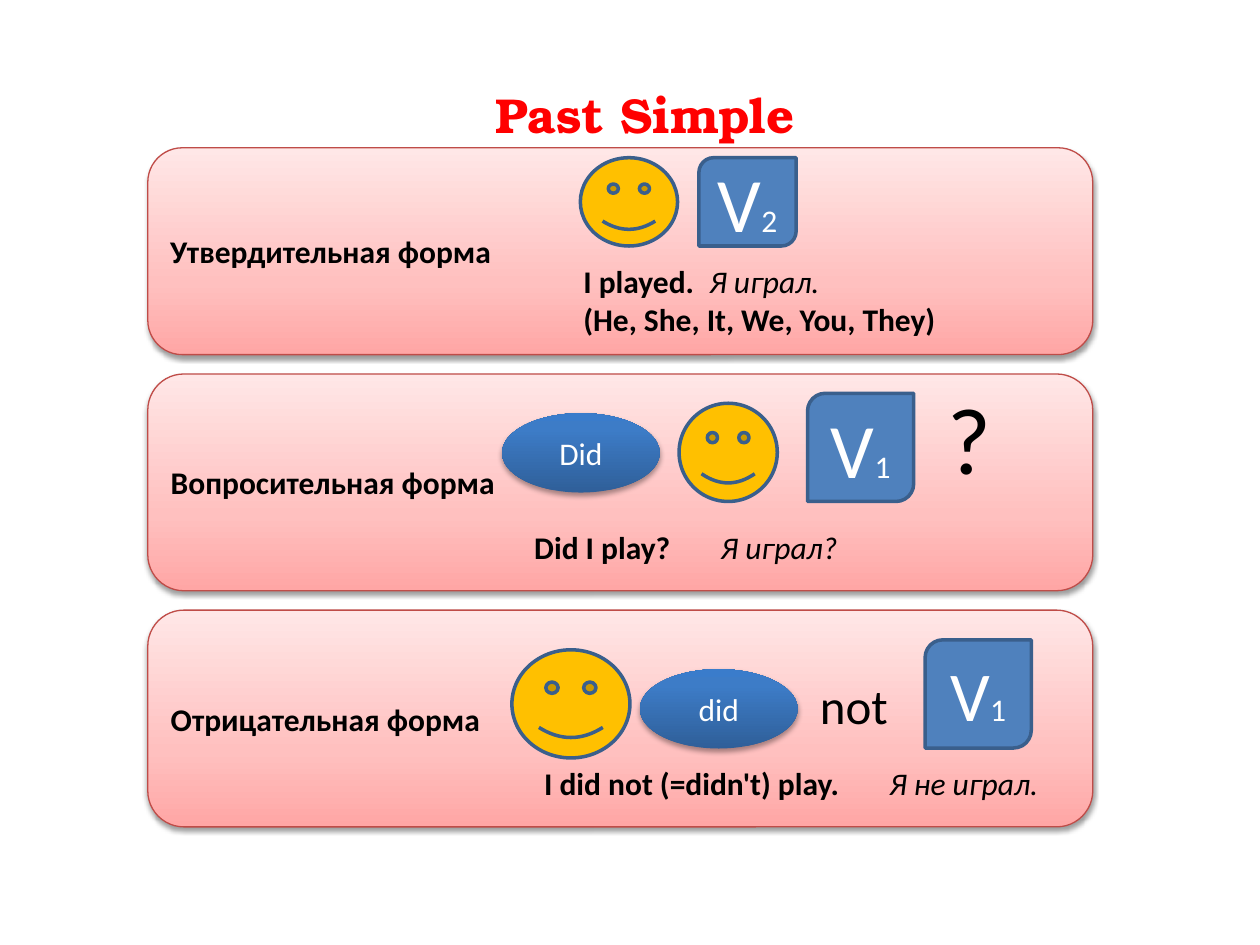
from lxml.etree import SubElement
from pptx import Presentation
from pptx.dml.color import RGBColor
from pptx.enum.shapes import MSO_SHAPE as Preset
from pptx.enum.text import MSO_ANCHOR as Anchor, PP_ALIGN as Align
from pptx.oxml.ns import qn
from pptx.util import Cm, Pt

FONT = "Calibri"
PANEL_STOPS = [(0, "FFA6A5"), (35, "FFC0BF"), (100, "FFE7E7")]
OVAL_STOPS = [(0, "2F5F99"), (80, "3D7CC7"), (100, "3A7CCB")]


def colour(code):
    """Return the colour for a hex string."""
    return RGBColor.from_string(code)


def add_span(para, text, size=18, code="000000", bold=False, italic=False, name=FONT):
    """Append one formatted run to a paragraph."""
    span = para.add_run()
    span.text = text
    font = span.font
    font.name, font.size, font.bold, font.italic = name, Pt(size), bold, italic
    font.color.rgb = colour(code)


def add_form(page, preset, place, line=None, width=2):
    """Add a preset shape without a shadow, outlined if a line colour is given."""
    shape = page.shapes.add_shape(preset, *map(Cm, place))
    shape.shadow.inherit = False
    if line:
        shape.line.color.rgb = colour(line)
        shape.line.width = Pt(width)
    else:
        shape.line.fill.background()
    shape.text_frame.vertical_anchor = Anchor.MIDDLE
    return shape


def fill_gradient(shape, stops):
    """Fill a shape with a gradient that runs from bottom to top."""
    shape.fill.gradient()
    shape.fill.gradient_angle = 90
    stop_list = shape.element.spPr.find(".//" + qn("a:gsLst"))
    for old in list(stop_list):
        stop_list.remove(old)
    for percent, code in stops:
        stop = SubElement(stop_list, qn("a:gs"), pos=str(percent * 1000))
        SubElement(stop, qn("a:srgbClr"), val=code)


def cast_shadow(shape, distance, opacity):
    """Give a shape a soft shadow straight below it."""
    effects = shape.element.spPr.find(qn("a:effectLst"))
    shadow = SubElement(effects, qn("a:outerShdw"), blurRad=str(Pt(3.1)),
                        dist=str(Pt(distance)), dir="5400000", rotWithShape="0")
    tint = SubElement(shadow, qn("a:srgbClr"), val="000000")
    SubElement(tint, qn("a:alpha"), val=str(opacity * 1000))


def add_panel(page, top, height, label):
    """Add a pink panel with the name of a sentence form."""
    panel = add_form(page, Preset.ROUNDED_RECTANGLE, (2.98, top, 19.05, height), "BF4C48", 0.75)
    fill_gradient(panel, PANEL_STOPS)
    cast_shadow(panel, 1.6, 38)
    para = panel.text_frame.paragraphs[0]
    para.alignment = Align.LEFT
    add_span(para, label, bold=True)


def add_smiley(page, *place):
    """Add the smiley that stands for the subject."""
    smiley = add_form(page, Preset.SMILEY_FACE, place, "3A5F8C")
    smiley.fill.solid()
    smiley.fill.fore_color.rgb = colour("FFC000")


def add_verb(page, place, number, size=44):
    """Add the tile that stands for a verb form."""
    tile = add_form(page, Preset.ROUND_2_DIAG_RECTANGLE, place, "3A5F8C")
    tile.fill.solid()
    tile.fill.fore_color.rgb = colour("4F81BD")
    para = tile.text_frame.paragraphs[0]
    para.alignment = Align.CENTER
    add_span(para, "V", size, "FFFFFF")
    add_span(para, number, 18, "FFFFFF")


def add_auxiliary(page, left, top, word):
    """Add the oval with the auxiliary verb."""
    oval = add_form(page, Preset.OVAL, (left, top, 3.18, 1.6))
    fill_gradient(oval, OVAL_STOPS)
    cast_shadow(oval, 1.8, 35)
    para = oval.text_frame.paragraphs[0]
    para.alignment = Align.CENTER
    add_span(para, word, 18, "FFFFFF")


def add_box(page, *place):
    """Add a wrapping text box and return its text frame."""
    frame = page.shapes.add_textbox(*map(Cm, place)).text_frame
    frame.word_wrap = True
    return frame


def add_word(page, place, text, size):
    """Add a single large word or sign."""
    add_span(add_box(page, *place).paragraphs[0], text, size)


def add_example(page, place, sentence, translation, tab):
    """Add an example sentence with its translation at a tab stop."""
    frame = add_box(page, *place)
    para = frame.paragraphs[0]
    tabs = SubElement(para._p.get_or_add_pPr(), qn("a:tabLst"))
    SubElement(tabs, qn("a:tab"), pos=str(Cm(tab)), algn="l")
    add_span(para, sentence + "\t", bold=True)
    add_span(para, translation, italic=True)
    return frame


def add_title(page, text):
    """Place and format the title."""
    title = page.shapes.title
    title.left, title.top, title.width, title.height = map(Cm, (5.36, 1.57, 15.29, 1.4))
    frame = title.text_frame
    frame.vertical_anchor = Anchor.TOP
    para = frame.paragraphs[0]
    para.alignment = Align.CENTER
    add_span(para, text, 28, "FF0000", bold=True, name="TeX Gyre Bonum")


def main():
    """Build the slide on the three forms of the tense."""
    deck = Presentation()
    deck.slide_width, deck.slide_height = Cm(25.4), Cm(19.05)
    page = deck.slides.add_slide(deck.slide_layouts[5])
    add_title(page, "Past Simple")

    add_panel(page, 2.98, 4.17, "Утвердительная форма")
    add_smiley(page, 11.7, 3.18, 1.96, 1.78)
    add_verb(page, (14.09, 3.18, 1.96, 1.78), "2")
    frame = add_example(page, (11.51, 5.16, 8.74, 1.8), "I played.", "Я играл.", 2.54)
    add_span(frame.add_paragraph(), "(He, She, It, We, You, They)", bold=True)

    add_panel(page, 7.54, 4.37, "Вопросительная форма")
    add_auxiliary(page, 10.12, 8.33, "Did")
    add_smiley(page, 13.69, 8.13, 1.98, 1.98)
    add_verb(page, (16.28, 7.93, 2.14, 2.18), "1")
    add_word(page, (18.85, 7.54, 1.4, 2.57), "?", 54)
    add_example(page, (10.52, 10.52, 10.92, 1.02), "Did I play?", "Я играл?", 3.76)

    add_panel(page, 12.3, 4.37, "Отрицательная форма")
    add_smiley(page, 10.32, 13.1, 2.38, 2.18)
    add_auxiliary(page, 12.9, 13.49, "did")
    add_word(page, (16.28, 13.49, 1.98, 1.45), "not", 28)
    add_verb(page, (18.65, 12.9, 2.14, 2.18), "1", 40)
    add_example(page, (10.72, 15.28, 10.72, 1.02), "I did not (=didn't) play.", "Я не играл.", 6.96)

    deck.save("out.pptx")


if __name__ == "__main__":
    main()
